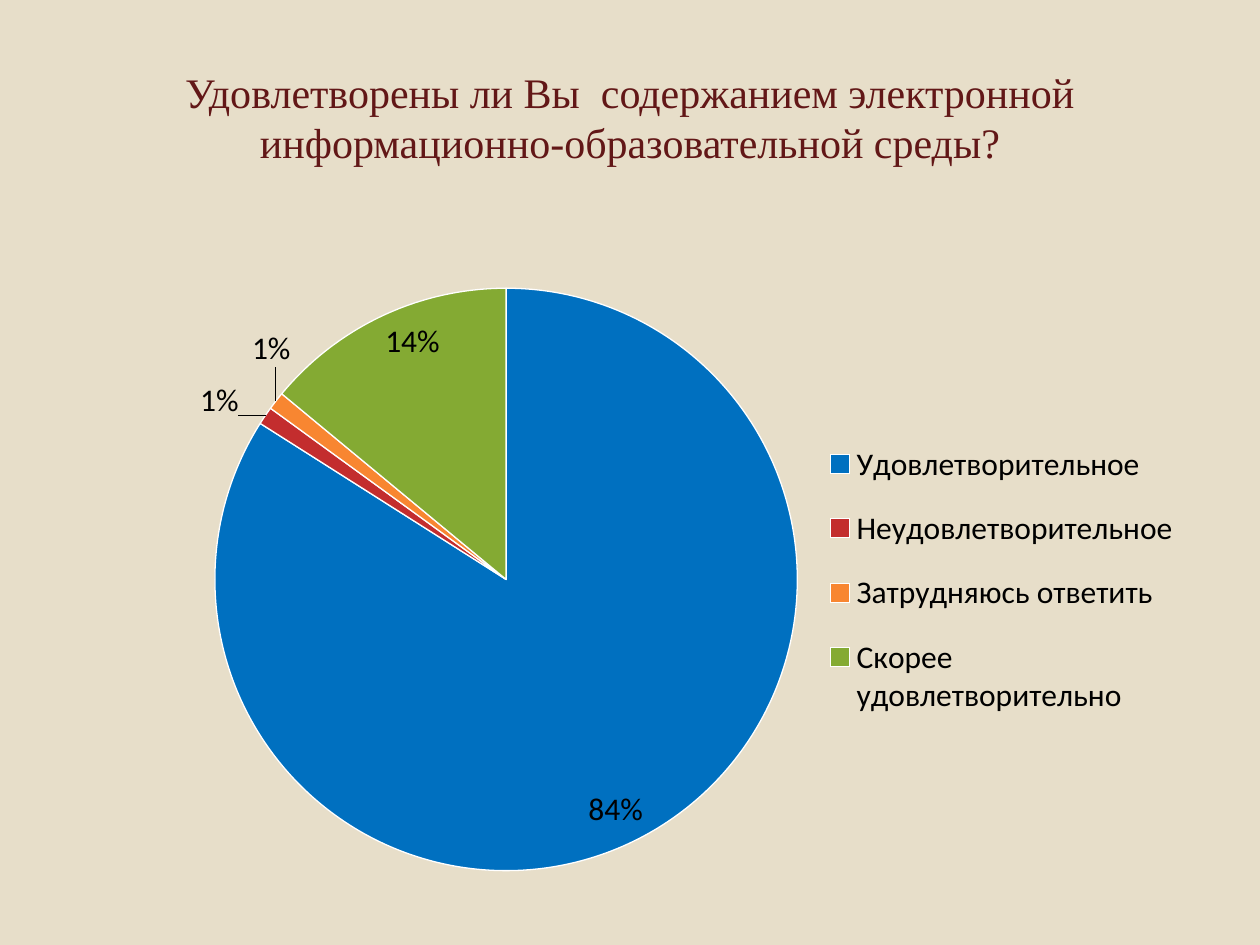
import pptx
import pptx.util
import pptx.dml.color
import pptx.chart.data
import pptx.enum.chart
import pptx.enum.text
import pptx.oxml

PX = 914400 // 126


def color(value):
    return pptx.dml.color.RGBColor.from_string(value)


def manual_layout(**values):
    """Build a c:layout element with the given fractions of the chart."""
    parts = "".join(f'<c:{name} val="{value}"/>' for name, value in values.items())
    return pptx.oxml.parse_xml(
        '<c:layout xmlns:c="http://schemas.openxmlformats.org/drawingml/2006/chart">'
        f"<c:manualLayout>{parts}</c:manualLayout></c:layout>")


deck = pptx.Presentation()
deck.slide_width, deck.slide_height = 1260 * PX, 945 * PX
page = deck.slides.add_slide(deck.slide_layouts[5])
page.background.fill.solid()
page.background.fill.fore_color.rgb = color("E7DEC9")

# Title
title = page.shapes.title
title.left, title.top, title.width, title.height = [n * PX for n in (63, 38, 1134, 158)]
title.text_frame.vertical_anchor = pptx.enum.text.MSO_ANCHOR.MIDDLE
para = title.text_frame.paragraphs[0]
para.alignment = pptx.enum.text.PP_ALIGN.CENTER
span = para.add_run()
span.text = "Удовлетворены ли Вы  содержанием электронной информационно-образовательной среды?"
span.font.name = "Times New Roman"
span.font.size = pptx.util.Pt(24)
span.font.color.rgb = color("621717")

# Answers: name, percent, slice colour, label offset (small slices only)
answers = [
    ("Удовлетворительное", 84, "0070C0", None),
    ("Неудовлетворительное", 1, "C32D2E", (-0.02, 0.01)),
    ("Затрудняюсь ответить", 1, "F88631", (0.02, -0.04)),
    ("Скорее удовлетворительно", 14, "84AA33", None),
]
data = pptx.chart.data.CategoryChartData()
data.categories = [answer[0] for answer in answers]
data.add_series("Series 1", [answer[1] for answer in answers])

# Pie chart
chart = page.shapes.add_chart(
    pptx.enum.chart.XL_CHART_TYPE.PIE,
    *[n * PX for n in (174, 214, 1022, 731)], data).chart
chart.has_title = False
chart.font.name = "Calibri"
chart.font.size = pptx.util.Pt(18)
chart.font.color.rgb = color("000000")
plot = chart.plots[0]
plot.vary_by_categories = True
plot_area = chart.element.chart.plotArea
for old in plot_area.findall(pptx.oxml.ns.qn("c:layout")):
    plot_area.remove(old)
plot_area.insert(0, manual_layout(layoutTarget="inner", xMode="edge", yMode="edge",
                                  x=0.04, y=0.1, w=0.57, h=0.8))

# Slices and percent labels
series = plot.series[0]
labels = series.data_labels
labels.show_percentage = True
labels.show_value = False
labels.number_format = "0%"
labels.number_format_is_linked = False
position = pptx.enum.chart.XL_LABEL_POSITION
for index, (name, percent, fill, offset) in enumerate(answers):
    point = series.points[index]
    point.format.fill.solid()
    point.format.fill.fore_color.rgb = color(fill)
    point.format.line.color.rgb = color("FFFFFF")
    point.format.line.width = pptx.util.Pt(0.75)
    label = point.data_label
    label.font.size = pptx.util.Pt(18)
    label.font.name = "Calibri"
    label.font.color.rgb = color("000000")
    label.position = position.OUTSIDE_END if offset else position.INSIDE_END

for item in series.data_labels._element.findall(pptx.oxml.ns.qn("c:dLbl")):
    item.find(pptx.oxml.ns.qn("c:showVal")).set("val", "0")
    item.find(pptx.oxml.ns.qn("c:showPercent")).set("val", "1")
    offset = answers[int(item.find(pptx.oxml.ns.qn("c:idx")).get("val"))][3]
    if offset:
        item.insert(1, manual_layout(x=offset[0], y=offset[1]))

# Legend
chart.has_legend = True
legend = chart.legend
legend.position = pptx.enum.chart.XL_LEGEND_POSITION.RIGHT
legend.include_in_layout = False
legend.font.name = "Calibri"
legend.font.size = pptx.util.Pt(18)
legend.font.color.rgb = color("000000")
for old in legend._element.findall(pptx.oxml.ns.qn("c:layout")):
    legend._element.remove(old)
legend._element.find(pptx.oxml.ns.qn("c:legendPos")).addnext(
    manual_layout(xMode="edge", yMode="edge", x=0.63, y=0.28, w=0.36, h=0.44))

deck.save("out.pptx")
